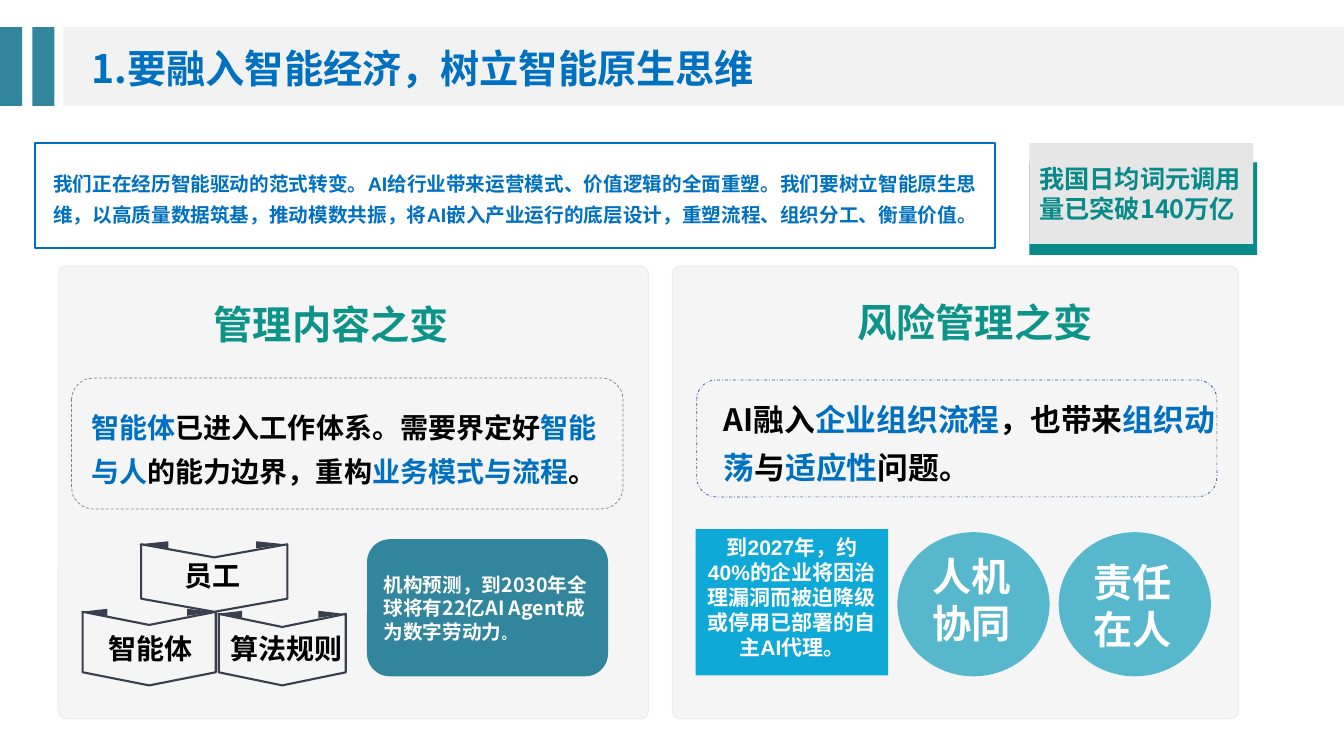
from lxml import etree
from pptx import Presentation
from pptx.dml.color import RGBColor
from pptx.enum import dml, shapes, text
from pptx.oxml.ns import qn
from pptx.util import Inches, Pt

COLORS = {
    "blue": "0070C0", "teal": "31859C", "green": "0D9488", "badge": "078A88",
    "band": "F2F2F2", "panel": "F5F5F5", "edge": "EEEEEE", "grey": "E7E6E6",
    "dash": "808080", "navy": "2E54A1", "ink": "3B3E4D", "sky": "0FA9D7",
    "aqua": "30A8C4", "black": "000000", "white": "FFFFFF",
}
SANS = "Noto Sans CJK SC"
SHAPE = shapes.MSO_SHAPE
CENTER = text.PP_ALIGN.CENTER
LEFT = text.PP_ALIGN.LEFT
TOP = text.MSO_ANCHOR.TOP
MIDDLE = text.MSO_ANCHOR.MIDDLE


def color(name):
    return RGBColor.from_string(COLORS[name])


def paint(shape, fill=None, line=None, width=1, dash=None):
    shape.shadow.inherit = False
    if fill:
        shape.fill.solid()
        shape.fill.fore_color.rgb = color(fill)
    else:
        shape.fill.background()
    if line:
        shape.line.color.rgb = color(line)
        shape.line.width = Pt(width)
        if dash:
            shape.line.dash_style = dash
    else:
        shape.line.fill.background()
    return shape


def add_box(page, kind, box, radius=None, **style):
    shape = page.shapes.add_shape(kind, *map(Inches, box))
    if radius is not None:
        shape.adjustments[0] = radius
    return paint(shape, **style)


def write(shape, paragraphs, size, font=SANS, align=LEFT, anchor=TOP, spacing=None):
    """Each paragraph is a list of (words, colour) spans."""
    frame = shape.text_frame
    frame.word_wrap = True
    frame.vertical_anchor = anchor
    for index, spans in enumerate(paragraphs):
        para = frame.add_paragraph() if index else frame.paragraphs[0]
        para.alignment = align
        if spacing:
            para.line_spacing = spacing
        for words, tone in spans:
            span = para.add_run()
            span.text = words
            span.font.size = Pt(size)
            span.font.bold = True
            span.font.name = font
            span.font.color.rgb = color(tone)
            east = etree.SubElement(span.font._element, qn("a:ea"))
            east.set("typeface", SANS)


def add_text(page, box, paragraphs, size, **style):
    write(page.shapes.add_textbox(*map(Inches, box)), paragraphs, size, **style)


def add_outline(page, contours, **style):
    points = [[(Inches(x), Inches(y)) for x, y in contour] for contour in contours]
    builder = page.shapes.build_freeform(*points[0][0])
    for index, contour in enumerate(points):
        if index:
            builder.move_to(*contour[0])
        builder.add_line_segments(contour[1:], close=True)
    return paint(builder.convert_to_shape(), **style)


def add_header(page, left, top, width, height):
    add_box(page, SHAPE.RECTANGLE, (left + 0.63, top, width - 0.63, height), fill="band")
    for offset in (0, 0.32):
        add_box(page, SHAPE.RECTANGLE, (left + offset, top, 0.22, height), fill="teal")
    add_text(page, (left + 0.81, top + 0.12, width - 0.82, 0.68),
             [[("1.要融入智能经济，树立智能原生思维", "blue")]], 28)


def add_intro(page, left, top, width, height):
    intro = add_box(page, SHAPE.RECTANGLE, (left, top, width, height),
                    line="blue", width=1.5)
    words = ("我们正在经历智能驱动的范式转变。AI给行业带来运营模式、价值逻辑的全面重塑。"
             "我们要树立智能原生思维，以高质量数据筑基，推动模数共振，"
             "将AI嵌入产业运行的底层设计，重塑流程、组织分工、衡量价值。")
    write(intro, [[(words, "blue")]], 14, font="Arial", align=CENTER,
          anchor=MIDDLE, spacing=1.3)


def add_badge(page, left, top, width, height):
    add_box(page, SHAPE.RECTANGLE, (left, top + 0.19, width, height - 0.19), fill="badge")
    front = add_box(page, SHAPE.RECTANGLE, (left, top, width - 0.04, height - 0.11),
                    fill="grey")
    write(front, [[("我国日均词元调用量已突破140万亿", "badge")]], 18, anchor=MIDDLE)


def add_panel(page, left, top, width, height):
    add_box(page, SHAPE.ROUNDED_RECTANGLE, (left, top, width, height), radius=0.017,
            fill="panel", line="edge")


def add_ribbon(page, left, top, width, height, label, label_box):
    middle, right, bottom = left + width / 2, left + width, top + height
    notch, fold = 0.13, width * 0.2
    add_outline(page, [[(left, bottom - notch), (middle, bottom), (right, bottom - notch),
                        (right, top), (middle, top + notch), (left, top)]],
                line="ink", width=1.5)
    # Folded ends behind the two upper corners
    folds = [[(tip + reach, top - 0.03), (tip, top), (tip + reach, top + 0.04)]
             for tip, reach in ((left - 0.02, fold), (right - 0.02, -fold))]
    add_outline(page, folds, fill="ink")
    add_text(page, label_box, [[(label, "black")]], 20, font="Arial", align=CENTER)


def add_management(page, left, top, width, height):
    add_text(page, (left + 1.33, top + 0.36, 2.75, 0.42),
             [[("管理内容之变", "green")]], 28, align=CENTER, anchor=MIDDLE)
    add_box(page, SHAPE.ROUNDED_RECTANGLE, (left + 0.13, top + 1.11, width - 0.38, 1.3),
            line="dash", width=0.5, dash=dml.MSO_LINE.DASH)
    add_text(page, (left + 0.23, top + 1.33, 5.22, 0.87),
             [[("智能体", "blue"), ("已进入工作体系。需要界定好", "black"),
               ("智能与人", "blue"), ("的能力边界，重构", "black"),
               ("业务模式与流程", "blue"), ("。", "black")]],
             20, anchor=MIDDLE, spacing=1.3)

    # Ribbons: box, label and label box, relative to the panel
    ribbons = [
        ((0.82, 2.76, 1.45, 0.67), "员工", (0.81, 2.85, 1.44, 0.31)),
        ((0.24, 3.43, 1.32, 0.73), "智能体", (0.25, 3.58, 1.32, 0.43)),
        ((1.59, 3.45, 1.26, 0.71), "算法规则", (1.56, 3.58, 1.4, 0.33)),
    ]
    for (x, y, wide, high), label, (label_x, label_y, *label_size) in ribbons:
        add_ribbon(page, left + x, top + y, wide, high, label,
                   (left + label_x, top + label_y, *label_size))

    forecast = add_box(page, SHAPE.ROUNDED_RECTANGLE,
                       (left + 3.06, top + 2.71, 2.39, 1.36), fill="teal")
    write(forecast, [[("机构预测，到2030年全球将有22亿AI Agent成为数字劳动力", "white"),
                      ("。", "white")]], 14, anchor=MIDDLE)
    forecast.text_frame.paragraphs[0].runs[-1].font.size = Pt(10)


def add_disc(page, left, top, label_box, lines):
    disc = add_box(page, SHAPE.OVAL, (left, top, 1.51, 1.43), fill="aqua")
    tint = disc._element.spPr.find(qn("a:solidFill"))[0]
    etree.SubElement(tint, qn("a:alpha")).set("val", "80000")
    add_text(page, label_box, [[(line, "white")] for line in lines], 28, font="Calibri")


def add_risk(page, left, top, width, height):
    add_text(page, (left + 1.6, top + 0.29, 2.8, 0.53),
             [[("风险管理之变", "green")]], 28, align=CENTER, anchor=MIDDLE)
    add_box(page, SHAPE.ROUNDED_RECTANGLE, (left + 0.24, top + 1.13, width - 0.45, 1.16),
            line="navy", width=0.5, dash=dml.MSO_LINE.DASH_DOT)
    add_text(page, (left + 0.41, top + 1.33, 5.11, 0.74),
             [[("AI融入", "black"), ("企业组织流程", "blue"), ("，也带来", "black"),
               ("组织动荡", "blue"), ("与", "black"), ("适应性", "blue"),
               ("问题。", "black")]],
             22, anchor=MIDDLE, spacing=1.3)

    warning = add_box(page, SHAPE.RECTANGLE, (left + 0.23, top + 2.61, 1.91, 1.45),
                      fill="sky")
    write(warning, [[("到2027年，约40%的企业将因治理漏洞而被迫降级或停用已部署的自主AI代理。",
                      "white")]], 15, font="Arial", align=CENTER)

    # Two principles
    discs = [(2.23, 2.79, 1.25, ["人机协同"]), (3.83, 2.85, 1.15, ["责任", "在人"])]
    for x, label_y, label_width, lines in discs:
        add_disc(page, left + x, top + 2.64,
                 (left + x + 0.25, top + label_y, label_width, 1.04), lines)


def main():
    deck = Presentation()
    deck.slide_width, deck.slide_height = Inches(13.33), Inches(7.5)
    page = deck.slides.add_slide(deck.slide_layouts[6])
    management, risk = (0.58, 2.64, 5.85, 4.49), (6.67, 2.64, 5.61, 4.49)

    add_header(page, 0, 0.27, 13.33, 0.78)
    add_intro(page, 0.35, 1.42, 9.52, 1.04)
    for panel in (management, risk):
        add_panel(page, *panel)
    add_badge(page, 10.21, 1.42, 2.26, 1.11)
    add_management(page, *management)
    add_risk(page, *risk)
    deck.save("out.pptx")


if __name__ == "__main__":
    main()
